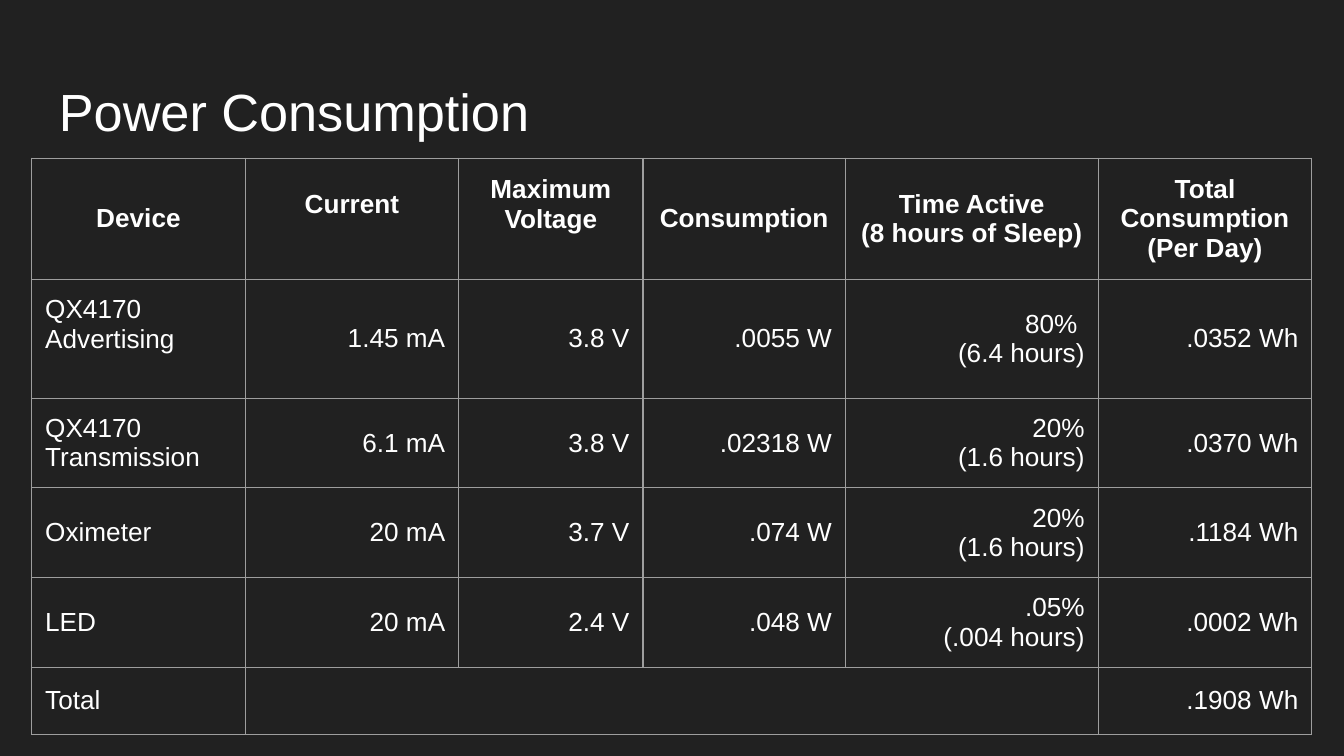
from lxml import etree
from pptx import Presentation
from pptx.dml.color import RGBColor
from pptx.enum.text import MSO_ANCHOR, PP_ALIGN
from pptx.oxml.ns import qn
from pptx.util import Pt

LEFT, CENTER, RIGHT = PP_ALIGN.LEFT, PP_ALIGN.CENTER, PP_ALIGN.RIGHT
TOP, MIDDLE = MSO_ANCHOR.TOP, MSO_ANCHOR.MIDDLE

BACKGROUND = RGBColor(0x21, 0x21, 0x21)
WHITE = RGBColor(0xFF, 0xFF, 0xFF)
GRID = RGBColor(0x9E, 0x9E, 0x9E)

INSET = 7.2
LINE_HEIGHT = 15.6

COLUMN_WIDTHS = [114.4, 114.4, 98.7, 108.5, 135.4, 114.5]
# Minimum heights: rows grow to fit their text.
ROW_HEIGHTS = [54, 59, 36, 36, 36, 35.7]
POWER_ROWS = [
    ["Device", "Current", "Maximum Voltage", "Consumption",
     "Time Active\n(8 hours of Sleep)", "Total Consumption\n(Per Day)"],
    ["QX4170 Advertising", "1.45 mA", "3.8 V", ".0055 W", "80% \n(6.4 hours)", ".0352 Wh"],
    ["QX4170 Transmission", "6.1 mA", "3.8 V", ".02318 W", "20%\n(1.6 hours)", ".0370 Wh"],
    ["Oximeter", "20 mA", "3.7 V", ".074 W", "20%\n(1.6 hours)", ".1184 Wh"],
    ["LED", "20 mA", "2.4 V", ".048 W", ".05%\n(.004 hours)", ".0002 Wh"],
    ["Total", "", "", "", "", ".1908 Wh"],
]
RAISED_CELLS = {(0, 1), (0, 2), (1, 0)}


def write_text(frame, text, size=14, bold=False, align=LEFT):
    """Fill a text frame, one paragraph per line of text."""
    for index, line in enumerate(text.split("\n")):
        paragraph = frame.add_paragraph() if index else frame.paragraphs[0]
        paragraph.alignment = align
        run = paragraph.add_run()
        run.text = line
        run.font.name = "Arial"
        run.font.size = Pt(size)
        run.font.bold = bold
        run.font.color.rgb = WHITE


def set_insets(target, bottom=INSET):
    target.margin_left = target.margin_right = target.margin_top = Pt(INSET)
    target.margin_bottom = Pt(bottom)


def add_borders(cell, color=GRID, width=0.75):
    properties = cell._tc.get_or_add_tcPr()
    for side in ("a:lnL", "a:lnR", "a:lnT", "a:lnB"):
        line = etree.SubElement(properties, qn(side), w=str(Pt(width)))
        fill = etree.SubElement(line, qn("a:solidFill"))
        etree.SubElement(fill, qn("a:srgbClr"), val=str(color))


class DarkSlide:
    def __init__(self, presentation):
        self.slide = presentation.slides.add_slide(presentation.slide_layouts[6])
        fill = self.slide.background.fill
        fill.solid()
        fill.fore_color.rgb = BACKGROUND

    def add_title(self, text, left, top, width, height):
        box = self.slide.shapes.add_textbox(Pt(left), Pt(top), Pt(width), Pt(height))
        frame = box.text_frame
        frame.word_wrap = True
        frame.vertical_anchor = TOP
        set_insets(frame)
        write_text(frame, text, size=28)

    def add_power_table(self, left, top):
        shape = self.slide.shapes.add_table(
            len(ROW_HEIGHTS), len(COLUMN_WIDTHS), Pt(left), Pt(top),
            Pt(sum(COLUMN_WIDTHS)), Pt(sum(ROW_HEIGHTS)))
        table = shape.table
        table.first_row = table.horz_banding = False
        for column, width in zip(table.columns, COLUMN_WIDTHS):
            column.width = Pt(width)
        for row, height in zip(table.rows, ROW_HEIGHTS):
            row.height = Pt(height)
        for row_index, texts in enumerate(POWER_ROWS):
            for column_index, text in enumerate(texts):
                self.format_cell(table.cell(row_index, column_index), text,
                                 row_index, column_index)
        total_row = len(ROW_HEIGHTS) - 1
        table.cell(total_row, 1).merge(table.cell(total_row, 4))

    def format_cell(self, cell, text, row, column):
        raised = (row, column) in RAISED_CELLS
        set_insets(cell, bottom=INSET + LINE_HEIGHT * raised)
        cell.vertical_anchor = MIDDLE
        add_borders(cell)
        cell.fill.background()
        if text:
            align = CENTER if row == 0 else RIGHT if column else LEFT
            write_text(cell.text_frame, text, bold=row == 0, align=align)


def main():
    presentation = Presentation()
    presentation.slide_width = Pt(720)
    presentation.slide_height = Pt(405)
    slide = DarkSlide(presentation)
    slide.add_title("Power Consumption", 24.5, 35.3, 671, 77)
    slide.add_power_table(17, 84.8)
    presentation.save("out.pptx")


if __name__ == "__main__":
    main()
